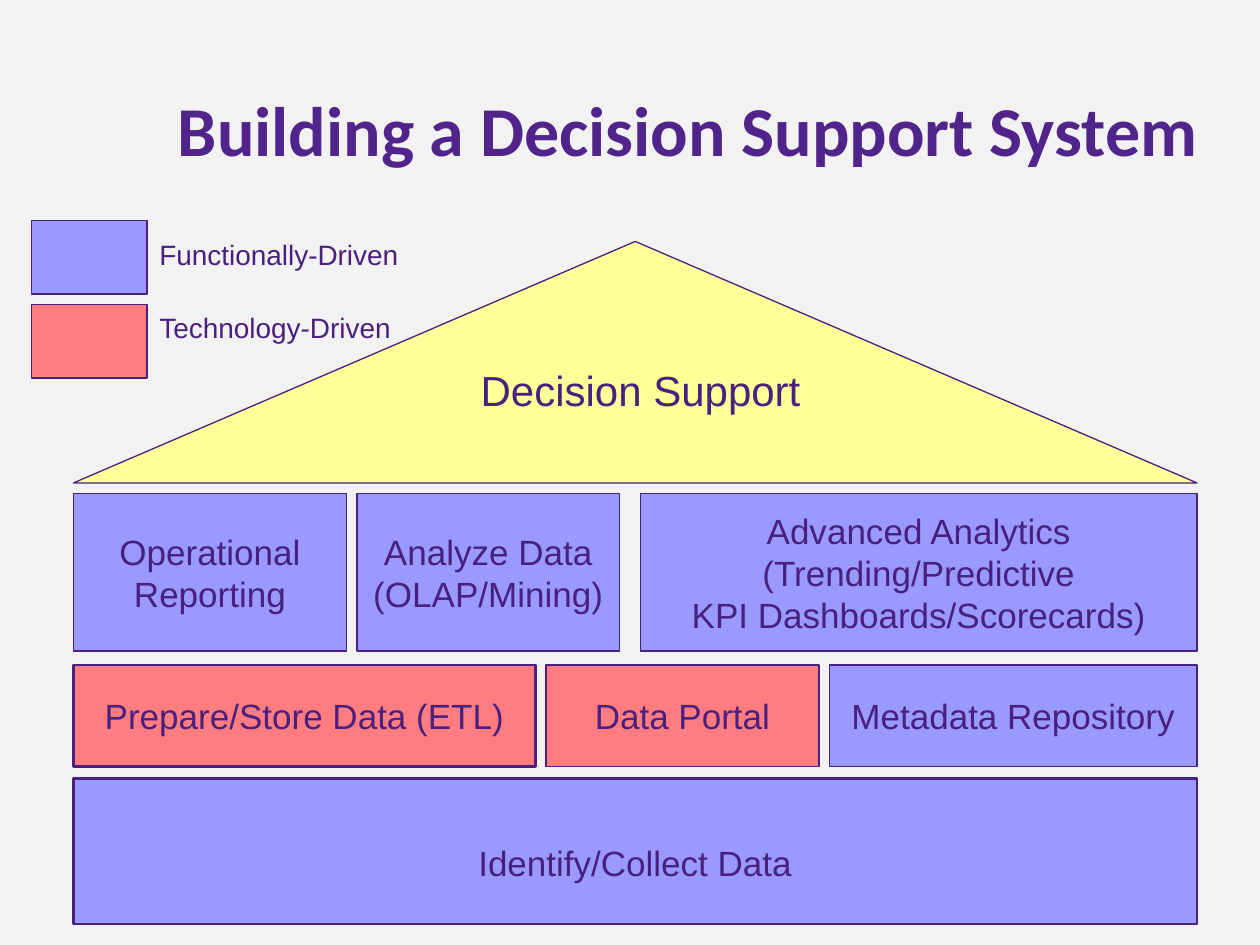
"""Build a slide showing the layers of a decision support system as a house."""
from dataclasses import dataclass

from pptx import Presentation
from pptx.dml.color import RGBColor
from pptx.enum import shapes as es, text as et
from pptx.util import Pt

HUES = {"back": "F2F2F2", "title": "51248C", "ink": "49207E",
        "func": "9999FF", "tech": "FF7C80", "roof": "FFFF99"}
LEFT, WIDE = 42, 642
RECT = es.MSO_SHAPE.RECTANGLE


@dataclass
class Block:
    """A filled shape with centred words; lengths in points."""
    x: float
    y: float
    w: float
    h: float
    hue: str
    words: str = ""
    line: float = 1
    kind: es.MSO_SHAPE = RECT
    drop: float = 3.6


@dataclass
class Label:
    """Free text; lengths in points."""
    x: float
    y: float
    w: float
    h: float
    words: str
    size: float
    align: et.PP_ALIGN = et.PP_ALIGN.LEFT


def tint(name: str) -> RGBColor:
    """Return a named colour."""
    return RGBColor.from_string(HUES[name])


def write(frame, words: str, size: float, align: et.PP_ALIGN,
          face: str = "Arial", hue: str = "ink", bold: bool = False) -> None:
    """Fill a text frame and format its runs."""
    frame.word_wrap = True
    frame.text = words
    for para in frame.paragraphs:
        para.alignment = align
        for run in para.runs:
            font = run.font
            font.name, font.size, font.bold = face, Pt(size), bold
            font.color.rgb = tint(hue)


def draw(slide, item: Block) -> None:
    """Draw one block."""
    shape = slide.shapes.add_shape(
        item.kind, Pt(item.x), Pt(item.y), Pt(item.w), Pt(item.h))
    shape.shadow.inherit = False
    shape.fill.solid()
    shape.fill.fore_color.rgb = tint(item.hue)
    shape.line.color.rgb = tint("ink")
    shape.line.width = Pt(item.line)
    if item.words:
        frame = shape.text_frame
        frame.vertical_anchor = et.MSO_ANCHOR.MIDDLE
        frame.margin_top = Pt(item.drop)
        write(frame, item.words, 20, et.PP_ALIGN.CENTER)


def note(slide, item: Label) -> None:
    """Draw one label."""
    box = slide.shapes.add_textbox(
        Pt(item.x), Pt(item.y), Pt(item.w), Pt(item.h))
    write(box.text_frame, item.words, item.size, item.align)


def head(slide, words: str) -> None:
    """Place and format the title."""
    title = slide.shapes.title
    title.left, title.top = Pt(66), Pt(42)
    title.width, title.height = Pt(654), Pt(63)
    title.text_frame.vertical_anchor = et.MSO_ANCHOR.MIDDLE
    write(title.text_frame, words, 40, et.PP_ALIGN.CENTER,
          "Calibri", "title", True)


BLOCKS = [
    Block(LEFT, 445, WIDE, 83, "func", "Identify/Collect Data", 1.5, drop=16),
    Block(LEFT, 138, WIDE, 138, "roof", line=0.75,
          kind=es.MSO_SHAPE.ISOSCELES_TRIANGLE),
    Block(LEFT, 282, 156, 90, "func", "Operational Reporting"),
    Block(204, 282, 150, 90, "func", "Analyze Data\n(OLAP/Mining)"),
    Block(366, 282, 318, 90, "func", "Advanced Analytics\n"
          "(Trending/Predictive\nKPI Dashboards/Scorecards)"),
    Block(LEFT, 380, 264, 58, "tech", "Prepare/Store Data (ETL)", 1.5),
    Block(312, 380, 156, 58, "tech", "Data Portal"),
    Block(474, 380, 210, 58, "func", "Metadata Repository"),
    Block(18, 126, 66, 42, "func", line=0.75),
    Block(18, 174, 66, 42, "tech", line=0.75),
]
LABELS = [
    Label(264, 205, 204, 29, "Decision Support", 24, et.PP_ALIGN.CENTER),
    Label(84, 132, 168, 26.5, "Functionally-Driven", 16),
    Label(84, 174, 168, 26.5, "Technology-Driven", 16),
]


def main() -> None:
    """Build and save the deck."""
    deck = Presentation()
    deck.slide_width, deck.slide_height = Pt(720), Pt(540)
    slide = deck.slides.add_slide(deck.slide_layouts[5])
    slide.background.fill.solid()
    slide.background.fill.fore_color.rgb = tint("back")
    head(slide, "Building a Decision Support System")
    for item in BLOCKS:
        draw(slide, item)
    for item in LABELS:
        note(slide, item)
    deck.save("out.pptx")


if __name__ == "__main__":
    main()
